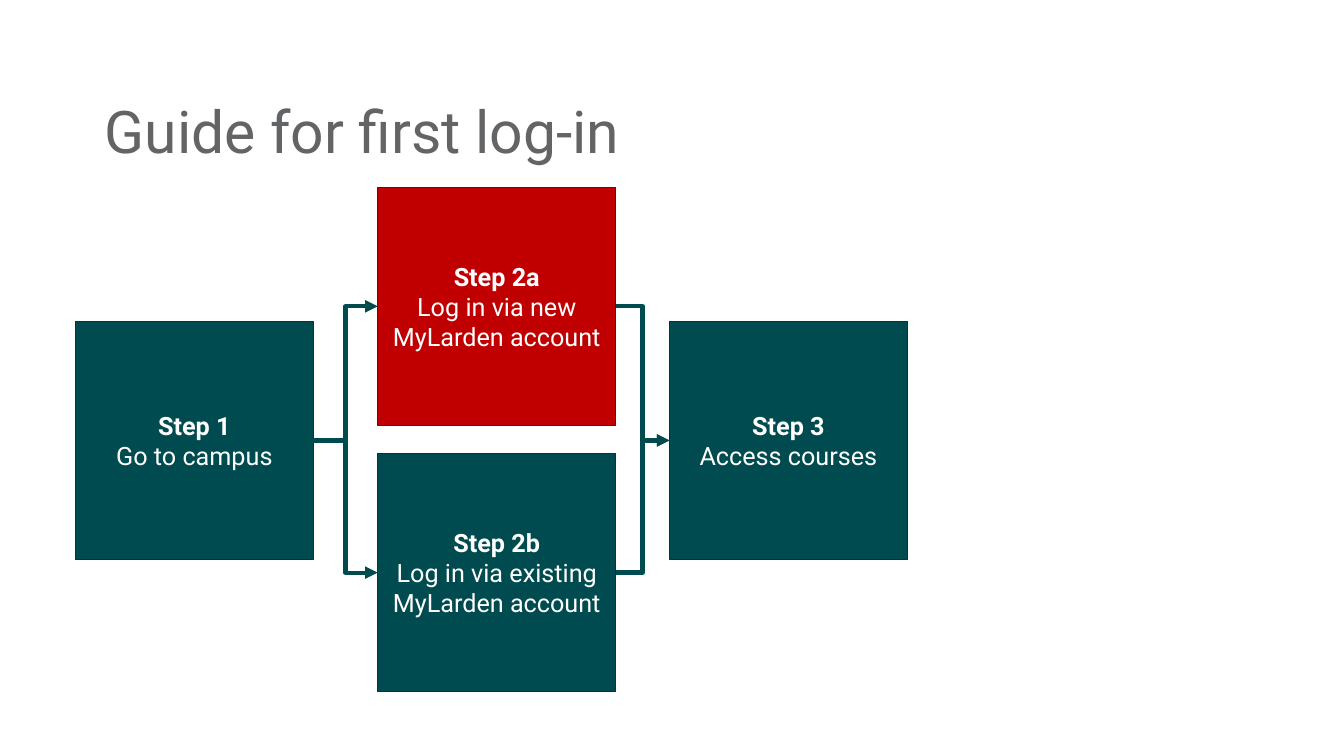
"""Builds the slide that guides a reader through the first log-in."""
import pptx
import pptx.dml.color
import pptx.enum.shapes
import pptx.enum.text
import pptx.oxml.ns
import pptx.util
from lxml import etree

Cm = pptx.util.Cm
Pt = pptx.util.Pt

TITLE = "Guide for first log-in"
FONT = "Roboto"
TEAL, RED, OUTLINE, GREY, WHITE = "004B4F", "C00000", "00373A", "636466", "FFFFFF"
SIDE = 6
STEPS = {
    "1": ("Go to campus", 1.9, 8.1, TEAL),
    "2a": ("Log in via new MyLarden account", 9.52, 4.72, RED),
    "3": ("Access courses", 16.87, 8.1, TEAL),
    "2b": ("Log in via existing MyLarden account", 9.52, 11.43, TEAL),
}
ARROWS = [("1", "2a"), ("1", "2b"), ("2b", "3"), ("2a", "3")]
LEFT_SIDE, RIGHT_SIDE = 1, 3


def color(value):
    return pptx.dml.color.RGBColor.from_string(value)


def style(paragraph, size, value, bold=False):
    for span in paragraph.runs:
        span.font.name = FONT
        span.font.size = Pt(size)
        span.font.bold = bold
        span.font.color.rgb = color(value)


def add_title(page):
    box = page.shapes.add_textbox(Cm(2.64), Cm(2.51), Cm(24.54), Cm(1.78))
    frame = box.text_frame
    frame.word_wrap = True
    frame.margin_left = 0
    frame.vertical_anchor = pptx.enum.text.MSO_ANCHOR.MIDDLE
    frame.text = TITLE
    frame.paragraphs[0].line_spacing = 0.9
    style(frame.paragraphs[0], 42, GREY)


def add_step(page, name, action, left, top, fill):
    box = page.shapes.add_shape(
        pptx.enum.shapes.MSO_SHAPE.RECTANGLE, Cm(left), Cm(top), Cm(SIDE), Cm(SIDE))
    box.shadow.inherit = False
    box.fill.solid()
    box.fill.fore_color.rgb = color(fill)
    box.line.color.rgb = color(OUTLINE)
    box.line.width = Pt(1)
    frame = box.text_frame
    frame.word_wrap = True
    frame.vertical_anchor = pptx.enum.text.MSO_ANCHOR.MIDDLE
    frame.text = f"Step {name}\n{action}"
    for index, paragraph in enumerate(frame.paragraphs):
        paragraph.alignment = pptx.enum.text.PP_ALIGN.CENTER
        style(paragraph, 18, WHITE, bold=index == 0)
    return box


def add_arrow(page, start, end):
    arrow = page.shapes.add_connector(pptx.enum.shapes.MSO_CONNECTOR.ELBOW, 0, 0, 0, 0)
    arrow.begin_connect(start, RIGHT_SIDE)
    arrow.end_connect(end, LEFT_SIDE)
    arrow.line.color.rgb = color(TEAL)
    arrow.line.width = Pt(3)
    qualified = pptx.oxml.ns.qn
    etree.SubElement(arrow.line._get_or_add_ln(), qualified("a:tailEnd"), type="triangle")
    etree.SubElement(arrow._element.spPr, qualified("a:effectLst"))


def main():
    deck = pptx.Presentation()
    deck.slide_width, deck.slide_height = Cm(33.87), Cm(19.05)
    page = deck.slides.add_slide(deck.slide_layouts[6])
    add_title(page)
    boxes = {name: add_step(page, name, *step) for name, step in STEPS.items()}
    for start, end in ARROWS:
        add_arrow(page, boxes[start], boxes[end])
    deck.save("out.pptx")


if __name__ == "__main__":
    main()
